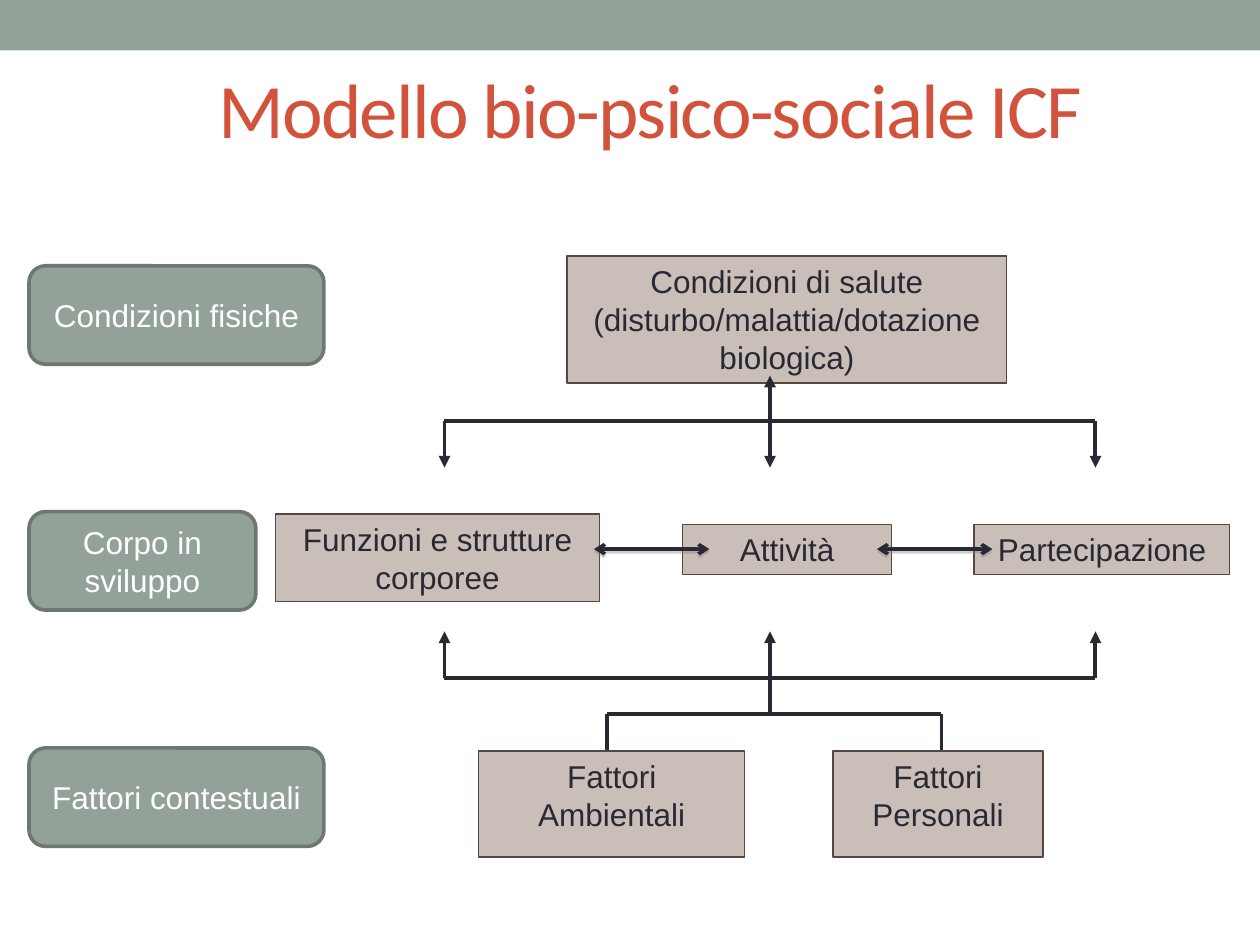
from lxml import etree
from pptx import Presentation
from pptx.dml.color import RGBColor
from pptx.enum.shapes import MSO_CONNECTOR, MSO_SHAPE
from pptx.enum.text import MSO_ANCHOR, PP_ALIGN
from pptx.oxml.ns import qn
from pptx.util import Pt

RECT, ROUND = MSO_SHAPE.RECTANGLE, MSO_SHAPE.ROUNDED_RECTANGLE
STRAIGHT = MSO_CONNECTOR.STRAIGHT
TOP, MIDDLE = MSO_ANCHOR.TOP, MSO_ANCHOR.MIDDLE
CENTER = PP_ALIGN.CENTER

COLORS = {
    "sage": "93A299", "sage_dark": "6D7871", "taupe": "CABFB8",
    "brown": "564841", "ink": "292934", "title": "D2533C",
    "white": "FFFFFF", "shadow": "808080",
}
BRANCHES = (0, 186, 372)  # offsets of the three component columns


def rgb(name):
    return RGBColor.from_string(COLORS[name])


def write(sp, lines, size, font, color, anchor):
    tf = sp.text_frame
    tf.word_wrap = True
    tf.vertical_anchor = anchor
    tf.text = "\n".join(lines)
    for p in tf.paragraphs:
        p.alignment = CENTER
        p.font.size = Pt(size)
        p.font.name = font
        p.font.color.rgb = rgb(color)


def add_block(s, box, fill, line=None, weight=0.75, shape=RECT):
    sp = s.shapes.add_shape(shape, *map(Pt, box))
    sp.shadow.inherit = False
    sp.fill.solid()
    sp.fill.fore_color.rgb = rgb(fill)
    if line:
        sp.line.color.rgb = rgb(line)
        sp.line.width = Pt(weight)
    else:
        sp.line.fill.background()
    return sp


def add_node(s, box, *lines):
    sp = add_block(s, box, "taupe", "brown")
    write(sp, lines, 18, "Arial", "ink", TOP)


def add_line(s, x1, y1, x2, y2, start=None, end=None, weight=2.25, shadow=False):
    """Draw a line; start and end name the arrowhead types."""
    cx = s.shapes.add_connector(STRAIGHT, Pt(x1), Pt(y1), Pt(x2), Pt(y2))
    cx.line.color.rgb = rgb("ink")
    cx.line.width = Pt(weight)
    ln = cx.line._get_or_add_ln()
    for tag, kind in (("a:headEnd", start), ("a:tailEnd", end)):
        if kind:
            etree.SubElement(ln, qn(tag), type=kind)
    effects = etree.SubElement(cx._element.spPr, qn("a:effectLst"))
    if shadow:
        outer = etree.SubElement(effects, qn("a:outerShdw"), blurRad="0",
                                 dist=str(Pt(1.6)), dir="5400000", rotWithShape="0")
        color = etree.SubElement(outer, qn("a:srgbClr"), val=COLORS["shadow"])
        etree.SubElement(color, qn("a:alpha"), val="38000")


def add_title(s, x, y, w, h):
    tb = s.shapes.add_textbox(Pt(x), Pt(y), Pt(w), Pt(h))
    write(tb, ["Modello bio-psico-sociale ICF"], 44, "Calibri", "title", MIDDLE)
    tb.text_frame.paragraphs[0].runs[0]._r.get_or_add_rPr().set("spc", "-100")


def add_row_labels(s, x, y):
    labels = (("Condizioni fisiche", 0, 168.5), ("Corpo in sviluppo", 140.5, 129.6),
              ("Fattori contestuali", 275.5, 168.5))
    for text, dy, w in labels:
        sp = add_block(s, (x, y + dy, w, 56.2), "sage", "sage_dark", 2.08, ROUND)
        write(sp, [text], 18, "Arial", "white", MIDDLE)


def add_health(s, x, y):
    """Health condition, branching down to the three components."""
    add_node(s, (x + 70, y, 251.3, 72.7),
             "Condizioni di salute", "(disturbo/malattia/dotazione biologica)")
    left, mid, right = (x + dx for dx in BRANCHES)
    bar, tip = y + 94.5, y + 121
    add_line(s, left, bar, right, bar)
    add_line(s, mid, y + 68.4, mid, tip, "triangle", "triangle")
    for bx in (left, right):
        add_line(s, bx, bar, bx, tip, end="triangle")


def add_components(s, x, y):
    add_node(s, (x, y, 185, 50), "Funzioni e strutture corporee")
    add_node(s, (x + 232.5, y + 5.8, 119.5, 28.8), "Attività")
    add_node(s, (x + 399, y + 5.8, 146.2, 28.8), "Partecipazione")
    for dx in (181.8, 343.5):
        add_line(s, x + dx, y + 20, x + dx + 66, y + 20, "arrow", "arrow", 2, True)


def add_context(s, x, y):
    """Contextual factors, joined and branching up to the three components."""
    left, mid, right = (x + dx for dx in BRANCHES)
    bar, join, top = y + 26.5, y + 47.3, y + 68.3
    factors = (("Fattori Ambientali", 19.6, 152, 93), ("Fattori Personali", 222, 120, 284))
    for text, dx, w, stem in factors:
        add_line(s, x + stem, join, x + stem, top)
        add_node(s, (x + dx, top, w, 60.7), text)
    add_line(s, x + factors[0][3], join, x + factors[1][3], join)
    add_line(s, left, bar, right, bar)
    for bx, base in ((left, bar), (mid, join), (right, bar)):
        add_line(s, bx, y, bx, base, start="triangle")


def main():
    prs = Presentation()
    prs.slide_width, prs.slide_height = Pt(720), Pt(540)
    s = prs.slides.add_slide(prs.slide_layouts[6])
    add_block(s, (0, 0, 720, 28.8), "sage")
    add_health(s, 254, 146.2)
    add_context(s, 254, 360.8)
    add_components(s, 157.6, 293.8)
    add_title(s, 67.7, 16.6, 607.7, 90)
    add_row_labels(s, 16.6, 151.9)
    prs.save("out.pptx")


if __name__ == "__main__":
    main()
